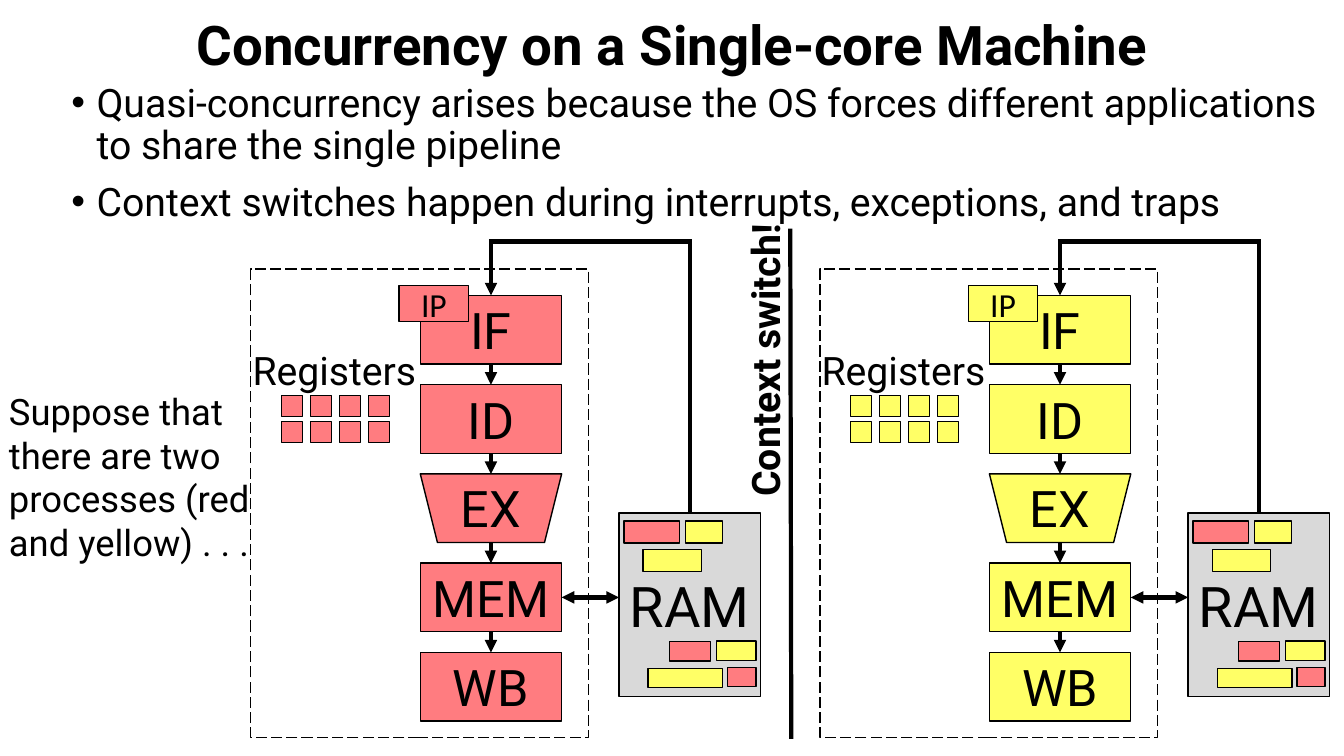
"""Builds the slide on concurrency on a single-core machine."""
from lxml import etree
from pptx import Presentation
from pptx.dml.color import RGBColor
from pptx.enum.dml import MSO_LINE
from pptx.enum.shapes import MSO_CONNECTOR, MSO_SHAPE
from pptx.enum.text import MSO_ANCHOR, PP_ALIGN
from pptx.oxml.ns import qn
from pptx.util import Pt

RECTANGLE, TRAPEZOID = MSO_SHAPE.RECTANGLE, MSO_SHAPE.TRAPEZOID
STRAIGHT = MSO_CONNECTOR.STRAIGHT
LONG_DASH = MSO_LINE.LONG_DASH
LEFT, CENTER = PP_ALIGN.LEFT, PP_ALIGN.CENTER
TOP, MIDDLE = MSO_ANCHOR.TOP, MSO_ANCHOR.MIDDLE
SITE_TOP, SITE_LEFT, SITE_BOTTOM, SITE_RIGHT = range(4)

BLACK, GREY, RED, YELLOW = "000000", "D9D9D9", "FF7C80", "FFFF66"
TITLE = "Concurrency on a Single-core Machine"
BULLETS = [
    "Quasi-concurrency arises because the OS forces different applications "
    "to share the single pipeline",
    "Context switches happen during interrupts, exceptions, and traps",
]
SCENARIO = "Suppose that there are two processes (red and yellow) . . ."
SWITCH = "Context switch!"
STAGES = ["IF", "ID", "EX", "MEM", "WB"]
PROCESSES = [(0, RED), (406.5, YELLOW)]
MEMORY_CELLS = [
    (445.7, 372.2, 39.6, 15.8, RED),
    (519.8, 476.6, 20.2, 13.7, RED),
    (478.1, 458.4, 29.5, 13.7, RED),
    (489.6, 372.2, 26.6, 15.8, YELLOW),
    (459.4, 392.4, 41.8, 15.8, YELLOW),
    (511.9, 458, 28.1, 13.7, YELLOW),
    (463, 477.4, 53.3, 13.7, YELLOW),
]
STAGE_LEFT, STAGE_TOP, STAGE_WIDTH, STAGE_HEIGHT = 300.2, 211, 101, 49
STAGE_PITCH = 63.75
RAM_LEFT, RAM_TOP, RAM_WIDTH, RAM_HEIGHT = 442.2, 366.5, 101, 131
REGISTER_LEFT, REGISTER_TOP, REGISTER_SIZE = 200.9, 282.3, 15.1
REGISTER_STEP_X, REGISTER_STEP_Y = 20.75, 18.6
LOOP_TOP = 172.6


def paint(color_format, color):
    color_format.rgb = RGBColor.from_string(color)


def write(box, texts, size, align=CENTER, anchor=MIDDLE, bold=False,
          font="Roboto", bullet=False, spacing=None):
    frame = box.text_frame
    frame.word_wrap = True
    frame.vertical_anchor = anchor
    for index, text in enumerate(texts):
        para = frame.paragraphs[0] if index == 0 else frame.add_paragraph()
        para.text = text
        para.alignment = align
        if spacing:
            para.line_spacing = spacing
        if bullet:
            para.space_before = Pt(10)
            properties = para._p.get_or_add_pPr()
            properties.set("marL", str(Pt(18)))
            properties.set("indent", str(Pt(-18)))
            etree.SubElement(properties, qn("a:buFont")).set("typeface", "Arial")
            etree.SubElement(properties, qn("a:buChar")).set("char", "•")
        para.font.name = font
        para.font.size = Pt(size)
        para.font.bold = bold
        paint(para.font.color, BLACK)


def add_text(page, area, texts, size, anchor=TOP, **style):
    box = page.shapes.add_textbox(*map(Pt, area))
    write(box, texts, size, anchor=anchor, **style)
    return box


def add_block(page, area, fill=None, kind=RECTANGLE):
    block = page.shapes.add_shape(kind, *map(Pt, area))
    block.shadow.inherit = False
    if fill:
        block.fill.solid()
        paint(block.fill.fore_color, fill)
    else:
        block.fill.background()
    paint(block.line.color, BLACK)
    block.line.width = Pt(1)
    return block


def add_line(page, start, end, begin=None, finish=None, ends=()):
    line = page.shapes.add_connector(STRAIGHT, *map(Pt, start + end))
    if begin:
        line.begin_connect(*begin)
    if finish:
        line.end_connect(*finish)
    paint(line.line.color, BLACK)
    line.line.width = Pt(3)
    for name in ends:
        etree.SubElement(line.line._get_or_add_ln(), qn(name)).set("type", "triangle")
    etree.SubElement(line._element.spPr, qn("a:effectLst"))


def add_stages(page, shift, color):
    left = STAGE_LEFT + shift
    middle = left + STAGE_WIDTH / 2
    blocks = {}
    for index, name in enumerate(STAGES):
        top = STAGE_TOP + index * STAGE_PITCH
        area = (left, top, STAGE_WIDTH, STAGE_HEIGHT)
        if name == "EX":
            block = add_block(page, area, color, TRAPEZOID)
            block.rotation = 180
            add_text(page, (left + 12.7, top - 1, 75.6, 51), [name], 36)
        else:
            block = add_block(page, area, color)
            write(block, [name], 36)
        blocks[name] = block
    for index, (upper, lower) in enumerate(zip(STAGES, STAGES[1:])):
        top = STAGE_TOP + index * STAGE_PITCH
        add_line(page, (middle, top + STAGE_HEIGHT), (middle, top + STAGE_PITCH),
                 begin=(blocks[upper], SITE_BOTTOM) if upper != "EX" else None,
                 finish=(blocks[lower], SITE_TOP) if lower != "EX" else None,
                 ends=["a:tailEnd"])
    return blocks


def add_process(page, shift, color):
    ram = add_block(page, (RAM_LEFT + shift, RAM_TOP, RAM_WIDTH, RAM_HEIGHT), GREY)
    write(ram, ["RAM"], 40)
    for left, top, width, height, fill in MEMORY_CELLS:
        add_block(page, (left + shift, top, width, height), fill)

    blocks = add_stages(page, shift, color)
    bus = STAGE_TOP + 3 * STAGE_PITCH + STAGE_HEIGHT / 2
    add_line(page, (STAGE_LEFT + STAGE_WIDTH + shift, bus), (RAM_LEFT + shift, bus),
             begin=(blocks["MEM"], SITE_RIGHT), ends=["a:headEnd", "a:tailEnd"])

    for row in range(2):
        for column in range(4):
            add_block(page, (REGISTER_LEFT + shift + column * REGISTER_STEP_X,
                             REGISTER_TOP + row * REGISTER_STEP_Y,
                             REGISTER_SIZE, REGISTER_SIZE), color)
    add_text(page, (172.6 + shift, 244.1, 132.5, 41), ["Registers"], 28)
    core = add_block(page, (179.1 + shift, 192.2, 241.2, 334.8))
    core.line.dash_style = LONG_DASH
    pointer = add_block(page, (285.1 + shift, 203.9, 49.7, 25.9), color)
    write(pointer, ["IP"], 24, font="Calibri")

    inlet = STAGE_LEFT + STAGE_WIDTH / 2 + shift
    outlet = RAM_LEFT + RAM_WIDTH / 2 + shift
    add_line(page, (inlet, LOOP_TOP), (inlet, STAGE_TOP),
             finish=(blocks["IF"], SITE_TOP), ends=["a:tailEnd"])
    add_line(page, (inlet - 1.5, LOOP_TOP), (outlet + 1.5, LOOP_TOP))
    add_line(page, (outlet, RAM_TOP), (outlet, LOOP_TOP), begin=(ram, SITE_TOP))


def main():
    deck = Presentation()
    deck.slide_width, deck.slide_height = Pt(960), Pt(540)
    page = deck.slides.add_slide(deck.slide_layouts[6])
    for shift, color in PROCESSES:
        add_process(page, shift, color)
    add_text(page, (0, 0.7, 960, 66.2), [TITLE], 39, anchor=MIDDLE, bold=True,
             spacing=0.9)
    add_text(page, (43.9, 56.2, 905.8, 116.6), BULLETS, 28, align=LEFT,
             bullet=True, spacing=0.9)
    add_text(page, (-0.7, 274.3, 193, 133.2), [SCENARIO], 26, align=LEFT)
    add_line(page, (564.5, 163.4), (565.2, 527.8))
    switch = add_text(page, (438.5, 236.9, 215.3, 41), [SWITCH], 28, bold=True)
    switch.rotation = 270
    deck.save("out.pptx")


if __name__ == "__main__":
    main()
